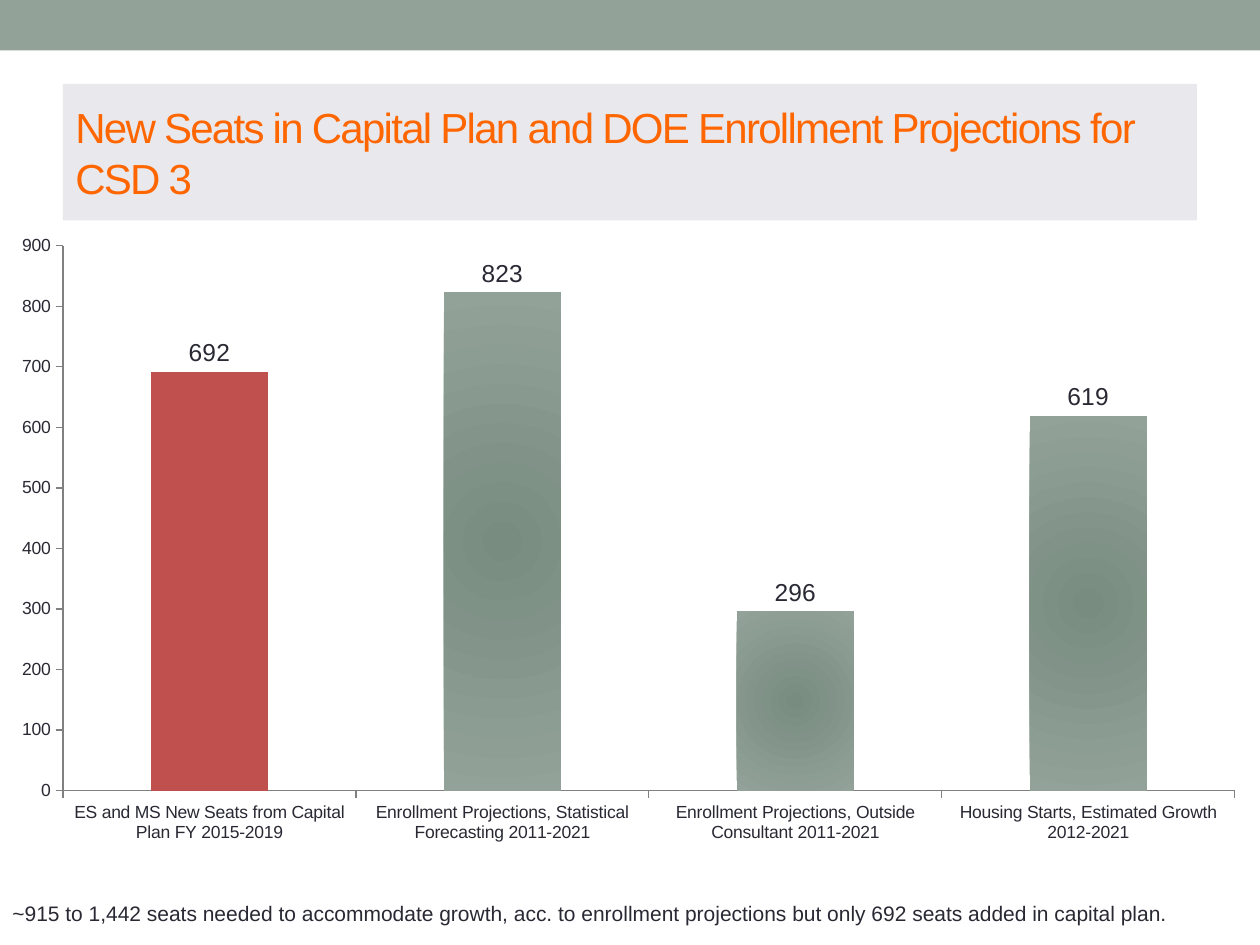
from lxml.etree import SubElement
from pptx import Presentation
from pptx.chart.data import CategoryChartData
from pptx.dml.color import RGBColor
from pptx.enum.chart import XL_CHART_TYPE, XL_LABEL_POSITION, XL_TICK_MARK
from pptx.enum.shapes import MSO_SHAPE
from pptx.enum.text import MSO_ANCHOR, MSO_AUTO_SIZE, PP_ALIGN
from pptx.oxml.ns import qn
from pptx.util import Pt

TITLE = "New Seats in Capital Plan and DOE Enrollment Projections for CSD 3"
NOTE = ("~915 to 1,442 seats needed to accommodate growth, acc. to enrollment "
        "projections but only 692 seats added in capital plan.")
SEATS = [
    ("ES and MS New Seats from Capital Plan FY 2015-2019", 692),
    ("Enrollment Projections, Statistical Forecasting 2011-2021", 823),
    ("Enrollment Projections, Outside Consultant 2011-2021", 296),
    ("Housing Starts, Estimated Growth 2012-2021", 619),
]
THEME = {
    "font": "Arial",
    "band": "93A299", "panel": "E8E8ED", "title": "FF6600", "text": "292934",
    "bar": "93A299", "bar_core": "788C80", "capital_plan": "C0504D", "axis": "808080",
    "title_size": 24, "note_size": 12, "axis_size": 10, "label_size": 14,
}
W, H = 720, 540
BAND = (0, 0, W, 28.8)
TITLE_BOX = (36, 48, 648, 78)
CHART_BOX = (0, 126, W, 362)
NOTE_BOX = (0, 511, 682, 21.8)
PLOT = {"x": 0.05, "y": 0.04, "w": 0.93, "h": 0.86}


def color(name):
    return RGBColor.from_string(THEME[name])


def apply(obj, values):
    for name, value in values.items():
        setattr(obj, name, value)


def set_font(font, size, name="text"):
    apply(font, {"name": THEME["font"], "size": Pt(THEME[size]), "bold": False})
    font.color.rgb = color(name)


def add_panel(s, box, fill):
    sp = s.shapes.add_shape(MSO_SHAPE.RECTANGLE, *map(Pt, box))
    sp.shadow.inherit = False
    sp.fill.solid()
    sp.fill.fore_color.rgb = color(fill)
    sp.line.fill.background()
    return sp


def write(sp, text, size, name, frame):
    tf = sp.text_frame
    apply(tf, frame)
    p = tf.paragraphs[0]
    p.alignment = PP_ALIGN.LEFT
    r = p.add_run()
    r.text = text
    set_font(r.font, size, name)
    return r


def fill_radial(series):
    fill = series.format.fill
    fill.gradient()
    for stop, name in zip(fill.gradient_stops, ("bar_core", "bar")):
        stop.color.rgb = color(name)
    grad = series._element.find(qn("c:spPr")).find(qn("a:gradFill"))
    grad.remove(grad.find(qn("a:lin")))
    circle = SubElement(grad, qn("a:path"), {"path": "circle"})
    SubElement(circle, qn("a:fillToRect"), dict.fromkeys("ltrb", "50000"))


def place_plot(chart):
    area = chart._chartSpace.chart.plotArea
    layout = area.find(qn("c:layout"))
    if layout is None:
        layout = area.makeelement(qn("c:layout"))
        area.insert(0, layout)
    manual = SubElement(layout, qn("c:manualLayout"))
    modes = {"layoutTarget": "inner", "xMode": "edge", "yMode": "edge"}
    for tag, value in {**modes, **PLOT}.items():
        SubElement(manual, qn(f"c:{tag}"), {"val": str(value)})


def add_seat_chart(s):
    data = CategoryChartData(number_format="#,##0")
    data.categories = [name for name, _ in SEATS]
    data.add_series("Series 1", [seats for _, seats in SEATS])
    chart = s.shapes.add_chart(
        XL_CHART_TYPE.COLUMN_CLUSTERED, *map(Pt, CHART_BOX), data).chart
    apply(chart, {"has_legend": False, "has_title": False})
    set_font(chart.font, "axis_size")
    place_plot(chart)

    for axis in (chart.category_axis, chart.value_axis):
        apply(axis, {"has_major_gridlines": False, "major_tick_mark": XL_TICK_MARK.OUTSIDE,
                     "minor_tick_mark": XL_TICK_MARK.NONE})
        axis.format.line.color.rgb = color("axis")
    apply(chart.value_axis, {"minimum_scale": 0, "maximum_scale": 900, "major_unit": 100})
    apply(chart.value_axis.tick_labels,
          {"number_format": "#,##0", "number_format_is_linked": False})

    plot = chart.plots[0]
    apply(plot, {"gap_width": 150, "vary_by_categories": False})
    series = plot.series[0]
    fill_radial(series)
    fill = series.points[0].format.fill
    fill.solid()
    fill.fore_color.rgb = color("capital_plan")

    labels = series.data_labels
    apply(labels, {"show_value": True, "position": XL_LABEL_POSITION.OUTSIDE_END,
                   "number_format": "#,##0", "number_format_is_linked": False})
    set_font(labels.font, "label_size")


def main():
    prs = Presentation()
    apply(prs, {"slide_width": Pt(W), "slide_height": Pt(H)})
    s = prs.slides.add_slide(prs.slide_layouts[6])
    add_panel(s, BAND, "band")
    title = write(add_panel(s, TITLE_BOX, "panel"), TITLE, "title_size", "title",
                  {"word_wrap": True, "vertical_anchor": MSO_ANCHOR.MIDDLE})
    title.font._element.set("spc", "-100")
    write(s.shapes.add_textbox(*map(Pt, NOTE_BOX)), NOTE, "note_size", "text",
          {"word_wrap": False, "auto_size": MSO_AUTO_SIZE.SHAPE_TO_FIT_TEXT})
    add_seat_chart(s)
    prs.save("out.pptx")


if __name__ == "__main__":
    main()
